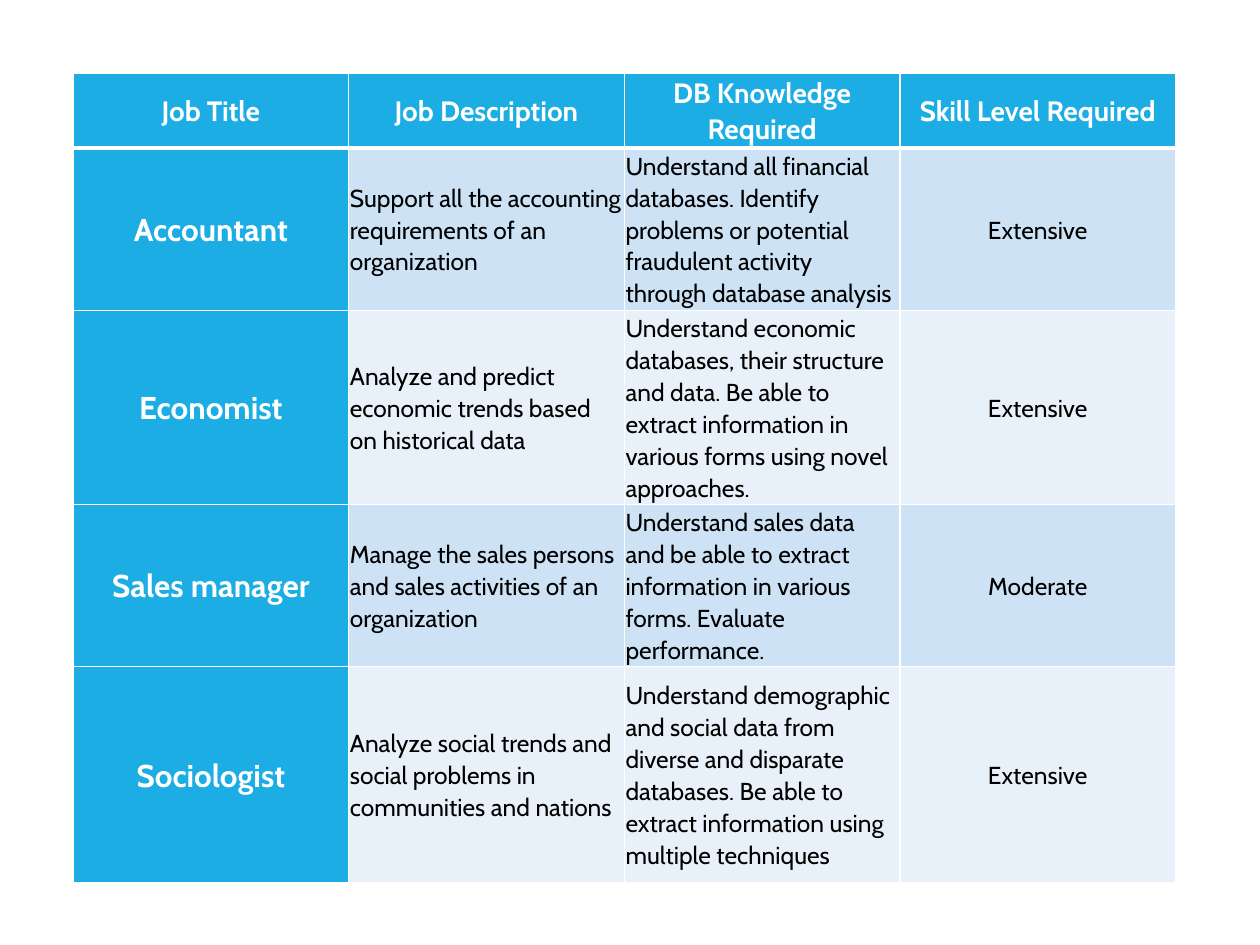
"""Build a slide with a table of jobs and the database knowledge each requires."""
from lxml.etree import SubElement
from pptx import Presentation
from pptx.dml.color import RGBColor
from pptx.enum.text import MSO_ANCHOR, PP_ALIGN
from pptx.oxml.ns import qn
from pptx.util import Inches, Pt

HEADERS = ["Job Title", "Job Description", "DB Knowledge Required", "Skill Level Required"]
JOBS = [
    ("Accountant",
     "Support all the accounting requirements of an organization",
     "Understand all financial databases. Identify problems or potential fraudulent activity "
     "through database analysis",
     "Extensive"),
    ("Economist",
     "Analyze and predict economic trends based on historical data",
     "Understand economic databases, their structure and data. Be able to extract information "
     "in various forms using novel approaches.",
     "Extensive"),
    ("Sales manager",
     "Manage the sales persons and sales activities of an organization",
     "Understand sales data and be able to extract information in various forms. "
     "Evaluate performance.",
     "Moderate"),
    ("Sociologist",
     "Analyze social trends and social problems in communities and nations",
     "Understand demographic and social data from diverse and disparate databases. "
     "Be able to extract information using multiple techniques",
     "Extensive"),
]
ROW_HEIGHTS = [0.55, 1.29, 1.5, 1.18, 1.72]
LEFT, TOP, WIDTH = 0.58, 0.58, 8.75
FONT = "Cabin"
BLUE = RGBColor(0x1C, 0xAD, 0xE4)
BANDS = [RGBColor(0xE8, 0xF1, 0xFA), RGBColor(0xCD, 0xE3, 0xF5)]
WHITE = RGBColor(0xFF, 0xFF, 0xFF)
BLACK = RGBColor(0, 0, 0)


def write_text(cell, text, size=14, color=BLACK, bold=False, align=PP_ALIGN.LEFT, after=8):
    cell.vertical_anchor = MSO_ANCHOR.MIDDLE
    cell.margin_left = cell.margin_right = cell.margin_top = cell.margin_bottom = Inches(0.01)
    p = cell.text_frame.paragraphs[0]
    p.alignment, p.line_spacing, p.space_after = align, 1.07, Pt(after)
    r = p.add_run()
    r.text = text
    r.font.name, r.font.size, r.font.bold = FONT, Pt(size), bold
    r.font.color.rgb = color


def set_borders(cell, top=1, bottom=1):
    tc_pr = cell._tc.get_or_add_tcPr()
    for side, width in (("L", 1), ("R", 1), ("T", top), ("B", bottom)):
        ln = SubElement(tc_pr, qn(f"a:ln{side}"), w=str(Pt(width)))
        SubElement(SubElement(ln, qn("a:solidFill")), qn("a:srgbClr"), val=str(WHITE))


def set_fill(cell, color):
    cell.fill.solid()
    cell.fill.fore_color.rgb = color


def main():
    prs = Presentation()
    prs.slide_width, prs.slide_height = Inches(10), Inches(7.5)
    s = prs.slides.add_slide(prs.slide_layouts[6])
    rows = [HEADERS, *JOBS]
    table = s.shapes.add_table(len(rows), len(HEADERS), Inches(LEFT), Inches(TOP),
                               Inches(WIDTH), Inches(sum(ROW_HEIGHTS))).table
    for row, height in zip(table.rows, ROW_HEIGHTS):
        row.height = Inches(height)

    for i, texts in enumerate(rows):
        for j, text in enumerate(texts):
            cell = table.cell(i, j)
            set_borders(cell, top=3 if i == 1 else 1, bottom=3 if i == 0 else 1)
            set_fill(cell, BLUE if i == 0 or j == 0 else BANDS[i % 2])
            if i == 0:
                write_text(cell, text, size=16, color=WHITE, bold=True,
                           align=PP_ALIGN.CENTER, after=0)
            elif j == 0:
                write_text(cell, text, size=18, color=WHITE, bold=True, align=PP_ALIGN.CENTER)
            else:
                write_text(cell, text, align=PP_ALIGN.CENTER if j == 3 else PP_ALIGN.LEFT)
    prs.save("out.pptx")


if __name__ == "__main__":
    main()
